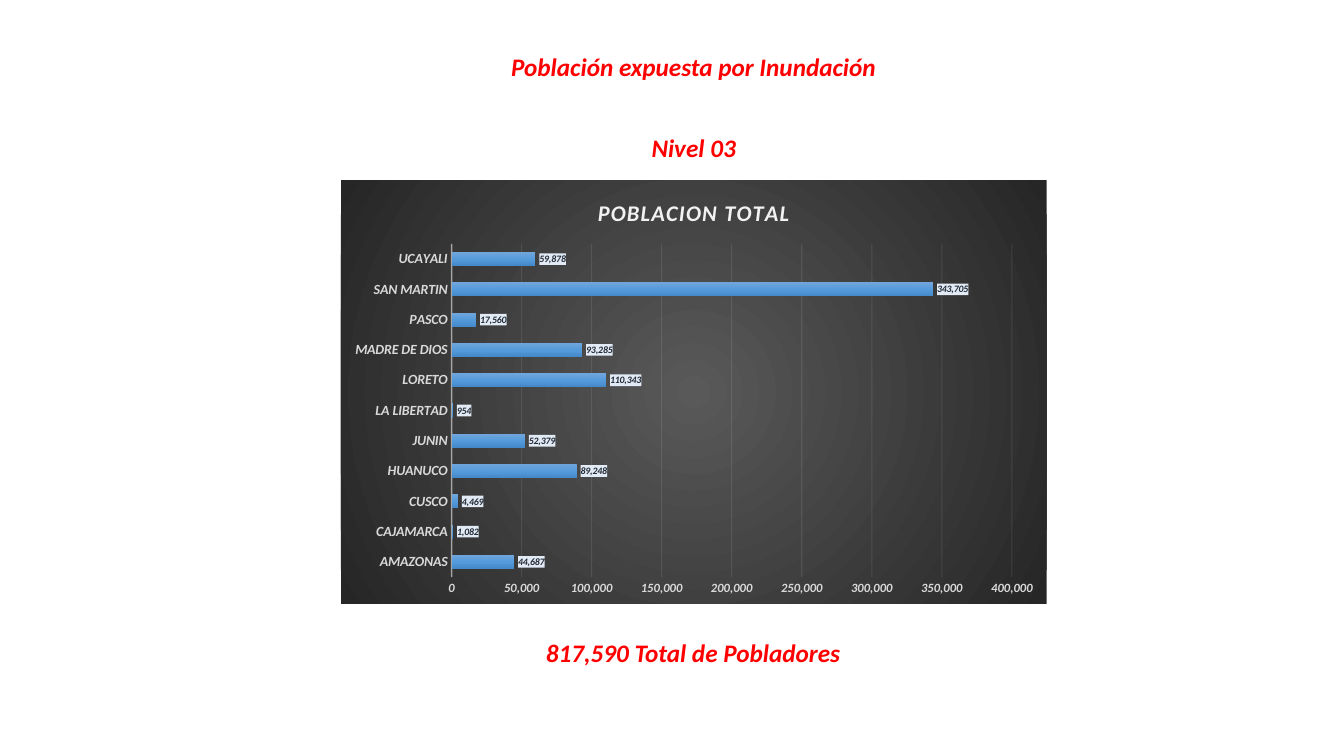
import pptx
import pptx.util
import pptx.chart.data
import pptx.dml.color
import pptx.enum.chart
import pptx.enum.text
import pptx.oxml
import pptx.oxml.ns

PX = 9144  # 100 px to the inch
COLORS = {
    "heading": "FF0000", "title": "F2F2F2", "axis_text": "D9D9D9", "line": "F2F2F2",
    "label_text": "222A35", "label_fill": "E1EAF5", "text": "000000",
    "back_in": "595959", "back_out": "262626",
    "bar_top": "71A6DB", "bar_mid": "559BDB", "bar_end": "448ACA",
}
NS = pptx.oxml.ns.nsdecls("a", "c")
qn = pptx.oxml.ns.qn


def style_font(font, size, color, **extra):
    values = {"size": pptx.util.Pt(size), "name": "Calibri", "bold": True, "italic": True, **extra}
    for name, value in values.items():
        setattr(font, name, value)
    font.color.rgb = pptx.dml.color.RGBColor.from_string(COLORS[color])


def gradient(stops, direction):
    marks = "".join(f'<a:gs pos="{pos * 1000}"><a:srgbClr val="{COLORS[c]}"/></a:gs>' for pos, c in stops)
    return f'<a:gradFill rotWithShape="1"><a:gsLst>{marks}</a:gsLst>{direction}</a:gradFill>'


prs = pptx.Presentation()
prs.slide_width, prs.slide_height = 1333 * PX, 750 * PX
s = prs.slides.add_slide(prs.slide_layouts[6])

# Headings above and below the chart
headings = [
    ("Población expuesta por Inundación", 495, 46, 386, False),
    ("817,590 Total de Pobladores", 520, 627, 335, True),
    ("Nivel 03", 634, 126, 108, True),
]
for text, left, top, width, wrap in headings:
    tf = s.shapes.add_textbox(left * PX, top * PX, width * PX, 40 * PX).text_frame
    tf.word_wrap = wrap
    tf.auto_size = pptx.enum.text.MSO_AUTO_SIZE.SHAPE_TO_FIT_TEXT
    p = tf.paragraphs[0]
    p.alignment = pptx.enum.text.PP_ALIGN.CENTER
    r = p.add_run()
    r.text = text
    style_font(r.font, 18, "heading")

# Population by region
population = {
    "AMAZONAS": 44687, "CAJAMARCA": 1082, "CUSCO": 4469, "HUANUCO": 89248,
    "JUNIN": 52379, "LA LIBERTAD": 954, "LORETO": 110343, "MADRE DE DIOS": 93285,
    "PASCO": 17560, "SAN MARTIN": 343705, "UCAYALI": 59878,
}
data = pptx.chart.data.CategoryChartData(number_format="#,##0")
data.categories = list(population)
data.add_series("Series 1", list(population.values()))
chart = s.shapes.add_chart(
    pptx.enum.chart.XL_CHART_TYPE.BAR_CLUSTERED, 338 * PX, 179 * PX, 700 * PX, 420 * PX, data).chart
chart.has_legend = False
style_font(chart.font, 10, "text", bold=False, italic=False)

# Chart title
chart.has_title = True
chart.chart_title.include_in_layout = False
p = chart.chart_title.text_frame.paragraphs[0]
r = p.add_run()
r.text = "POBLACION TOTAL"
style_font(r.font, 16, "title")
r.font._element.set("spc", "100")

# Axes
cat, val = chart.category_axis, chart.value_axis
for axis, size in ((cat, 10), (val, 9)):
    axis.major_tick_mark = axis.minor_tick_mark = pptx.enum.chart.XL_TICK_MARK.NONE
    style_font(axis.tick_labels.font, size, "axis_text")
for name, value in {"minimum_scale": 0, "maximum_scale": 400000, "major_unit": 50000}.items():
    setattr(val, name, value)
val.tick_labels.number_format = "#,##0"
val.tick_labels.number_format_is_linked = False
val.format.line.fill.background()
for line, width, alpha in ((cat.format.line, 1, 54), (val.major_gridlines.format.line, 0.75, 10)):
    line.width = pptx.util.Pt(width)
    line.color.rgb = pptx.dml.color.RGBColor.from_string(COLORS["line"])
    color = line.fill._xPr.find(".//" + qn("a:srgbClr"))
    color.append(pptx.oxml.parse_xml(f'<a:alpha {NS} val="{alpha * 1000}"/>'))

# Bars and their value labels
plot = chart.plots[0]
for name, value in {"gap_width": 115, "overlap": -20, "vary_by_categories": False}.items():
    setattr(plot, name, value)
series = plot.series[0]
labels = series.data_labels
label_format = {
    "show_value": True, "number_format": "#,##0", "number_format_is_linked": False,
    "position": pptx.enum.chart.XL_LABEL_POSITION.OUTSIDE_END,
}
for name, value in label_format.items():
    setattr(labels, name, value)
style_font(labels.font, 7, "label_text")
labels._element.find(qn("c:txPr")).addprevious(pptx.oxml.parse_xml(
    f'<c:spPr {NS}><a:solidFill><a:srgbClr val="{COLORS["label_fill"]}"/></a:solidFill></c:spPr>'))
bar_fill = gradient([(0, "bar_top"), (50, "bar_mid"), (100, "bar_end")], '<a:lin ang="5400000" scaled="0"/>')
bar_props = series._element.get_or_add_spPr()
bar_props.append(pptx.oxml.parse_xml(bar_fill.replace("<a:gradFill", f"<a:gradFill {NS}", 1)))

# Dark radial background
center = '<a:path path="circle"><a:fillToRect l="50000" t="50000" r="50000" b="50000"/></a:path>'
back_fill = gradient([(0, "back_in"), (100, "back_out")], center)
space = chart._chartSpace
space.find(qn("c:chart")).addnext(pptx.oxml.parse_xml(
    f"<c:spPr {NS}>{back_fill}<a:ln><a:noFill/></a:ln></c:spPr>"))

# Plot area position within the chart
area = space.find(".//" + qn("c:plotArea"))
for old in area.findall(qn("c:layout")):
    area.remove(old)
modes = '<c:layoutTarget val="inner"/><c:xMode val="edge"/><c:yMode val="edge"/>'
box = "".join(f'<c:{k} val="{v}"/>' for k, v in {"x": 0.157, "y": 0.15, "w": 0.794, "h": 0.787}.items())
area.insert(0, pptx.oxml.parse_xml(
    f"<c:layout {NS}><c:manualLayout>{modes}{box}</c:manualLayout></c:layout>"))

prs.save("out.pptx")
